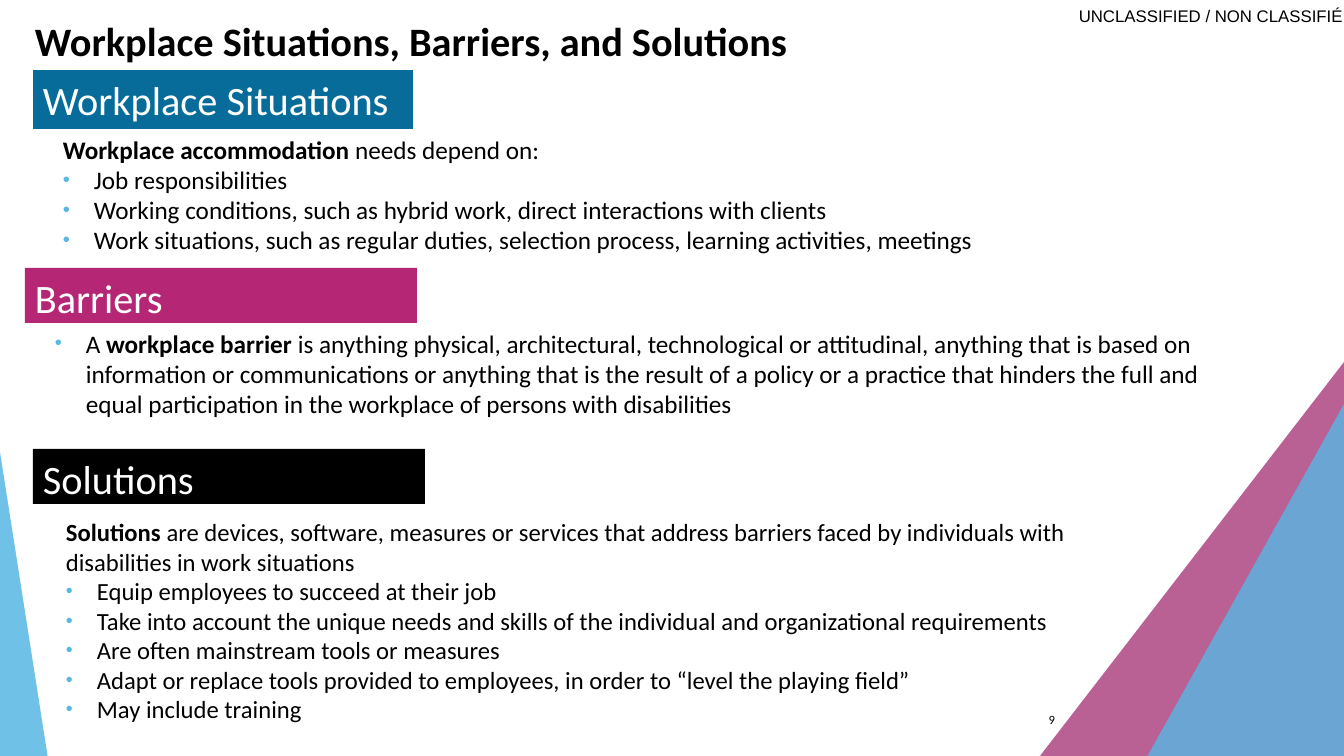
from lxml import etree
from pptx import Presentation
from pptx.dml.color import RGBColor
from pptx.enum.shapes import MSO_SHAPE as SHAPE
from pptx.enum.text import MSO_ANCHOR as ANCHOR, PP_ALIGN as ALIGN
from pptx.oxml.ns import qn
from pptx.util import Pt

PX = 914400 / 100.8  # EMU per px
C = {"black": "000000", "white": "FFFFFF", "teal": "086C9B", "pink": "B52775",
     "plum": "9E246B", "sky": "58B7E3"}

prs = Presentation()
prs.slide_width, prs.slide_height = round(1344 * PX), round(756 * PX)
s = prs.slides.add_slide(prs.slide_layouts[6])


def add_block(kind, box, color, alpha=100):
    """Add a preset shape with a plain fill, no line and no shadow."""
    sp = s.shapes.add_shape(kind, *[round(v * PX) for v in box])
    sp.shadow.inherit = False
    sp.line.fill.background()
    sp.fill.solid()
    sp.fill.fore_color.rgb = RGBColor.from_string(C[color])
    if alpha < 100:
        clr = sp.fill._xPr.find(qn("a:solidFill"))[0]
        etree.SubElement(clr, qn("a:alpha"), val=str(alpha * 1000))
    return sp


def add_text(paras, box=None, sp=None, size=18, color="black", bold=False, font="Calibri",
             align=ALIGN.LEFT, anchor=ANCHOR.TOP, inset=None):
    """Write paragraphs: "• " starts a bullet, ** switches bold on and off."""
    sp = sp or s.shapes.add_textbox(*[round(v * PX) for v in box])
    tf = sp.text_frame
    tf.word_wrap, tf.vertical_anchor = True, anchor
    if inset is not None:
        tf.margin_left = tf.margin_right = tf.margin_top = tf.margin_bottom = inset
    for i, text in enumerate(paras):
        p = tf.add_paragraph() if i else tf.paragraphs[0]
        p.alignment = align
        if text.startswith("• "):
            text = text[2:]
            pPr = p._p.get_or_add_pPr()
            indent = round(31 * PX)
            pPr.set("marL", str(indent))
            pPr.set("indent", str(-indent))
            bu_clr = etree.SubElement(pPr, qn("a:buClr"))
            etree.SubElement(bu_clr, qn("a:srgbClr"), val=C["sky"])
            etree.SubElement(pPr, qn("a:buSzPct"), val="80000")
            etree.SubElement(pPr, qn("a:buFont"), typeface="Arial")
            etree.SubElement(pPr, qn("a:buChar"), char="•")
        for j, part in enumerate(text.split("**")):
            if part:
                r = p.add_run()
                r.text = part
                r.font.name, r.font.size = font, Pt(size)
                r.font.bold = bold or j % 2 == 1
                r.font.color.rgb = RGBColor.from_string(C[color])


# Corner triangles
for box, apex, color, alpha in [
    ((1033, 362, 311, 403), 1, "plum", 72),
    ((1143, 404, 201, 360), 1, "sky", 80),
    ((0, 452, 49, 313), 0, "sky", 85),
]:
    add_block(SHAPE.ISOSCELES_TRIANGLE, box, color, alpha).adjustments[0] = apex

# Classification mark and title
add_text(["UNCLASSIFIED / NON CLASSIFIÉ"], (1039, 0, 304, 31), size=12, font="Arial",
         align=ALIGN.RIGHT, anchor=ANCHOR.MIDDLE, inset=0)
add_text(["Workplace Situations, Barriers, and Solutions"], (25, 11, 790, 55),
         size=28.8, bold=True)

# Sections: heading bar, then body text
sections = [
    ("Workplace Situations", (33, 70, 380, 59), "teal", (53, 129, 1174, 167), 18, [
        "**Workplace accommodation **needs depend on:",
        "• Job responsibilities",
        "• Working conditions, such as hybrid work, direct interactions with clients",
        "• Work situations, such as regular duties, selection process, learning activities, "
        "meetings",
    ]),
    ("Barriers", (25, 268, 392, 55), "pink", (45, 323, 1207, 127), 18, [
        "• A **workplace barrier **is anything physical, architectural, technological or "
        "attitudinal, anything that is based on information or communications or anything "
        "that is the result of a policy or a practice that hinders the full and equal "
        "participation in the workplace of persons with disabilities",
    ]),
    ("Solutions", (33, 449, 392, 55), "black", (56, 512, 1093, 235), 17.6, [
        "**Solutions** are devices, software, measures or services that address barriers "
        "faced by individuals with disabilities in work situations",
        "• Equip employees to succeed at their job",
        "• Take into account the unique needs and skills of the individual and "
        "organizational requirements",
        "• Are often mainstream tools or measures",
        "• Adapt or replace tools provided to employees, in order to “level the playing field”",
        "• May include training",
    ]),
]
for heading, bar, color, body, size, paras in sections:
    add_text([heading], sp=add_block(SHAPE.RECTANGLE, bar, color), size=28.8, color="white")
    add_text(paras, body, size=size)

# Page number
add_text(["9"], (990, 699, 75, 40), size=9, align=ALIGN.RIGHT, anchor=ANCHOR.MIDDLE)

prs.save("out.pptx")
